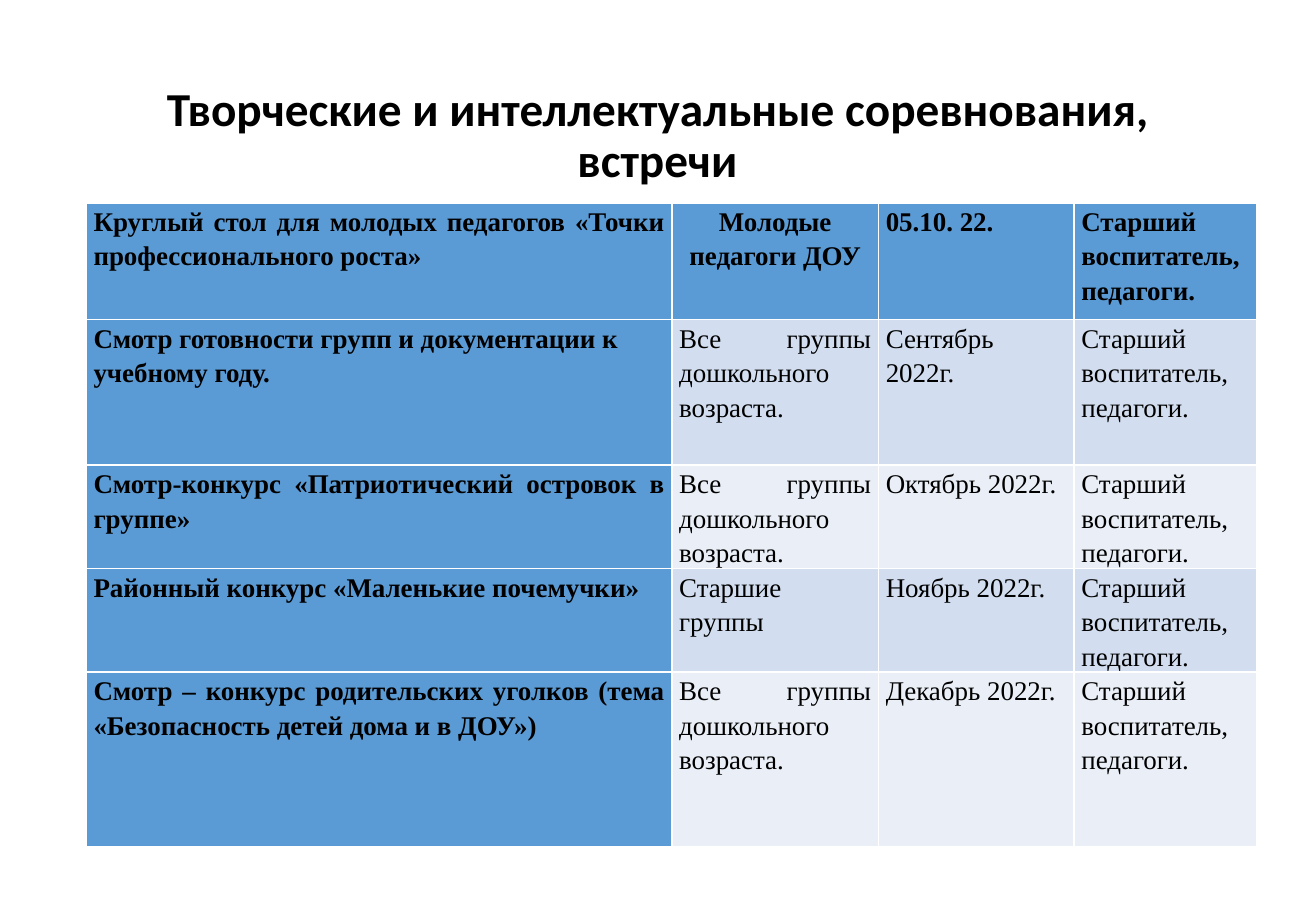
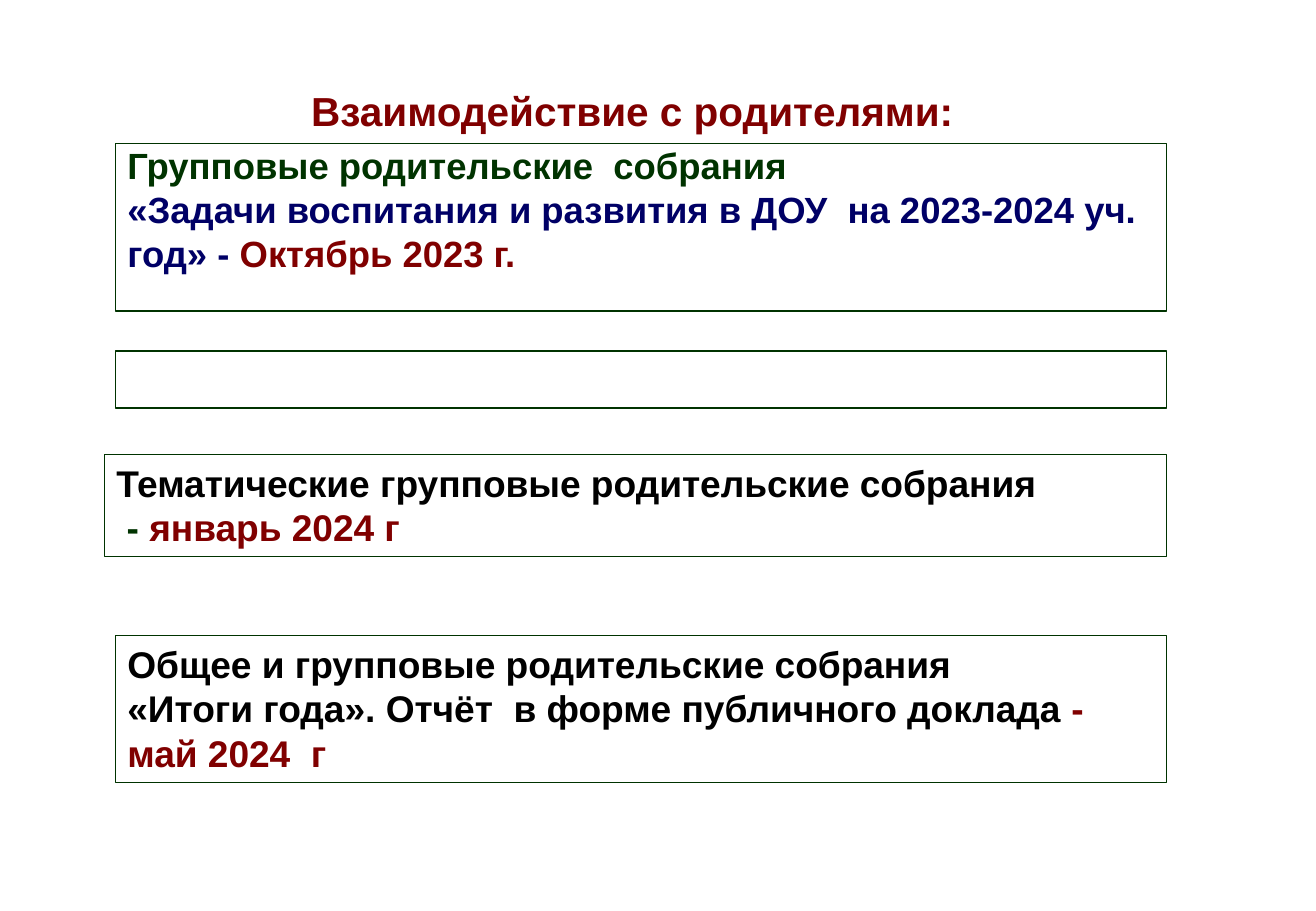
import pptx
import pptx.util
import pptx.dml.color
import pptx.enum.shapes
import pptx.enum.text

Inches = pptx.util.Inches
Pt = pptx.util.Pt
ALIGN = pptx.enum.text.PP_ALIGN
ANCHOR = pptx.enum.text.MSO_ANCHOR

COLORS = {
    "black": "000000", "white": "FFFFFF", "header": "5B9BD5",
    "band_dark": "D2DEEF", "band_light": "EAEFF7",
    "green": "003300", "navy": "000066", "red": "800000",
}

# Slide 1 content
CONTEST_TITLE = "Творческие и интеллектуальные соревнования, встречи"
STAFF = "Старший воспитатель, педагоги."
ALL_GROUPS = "Все группы дошкольного возраста."
CONTESTS = [
    ("Круглый стол для молодых педагогов «Точки профессионального роста»",
     "Молодые педагоги ДОУ", "05.10. 22.", STAFF),
    ("Смотр готовности групп и документации к учебному году.",
     ALL_GROUPS, "Сентябрь 2022г.", STAFF),
    ("Смотр-конкурс «Патриотический островок в группе»",
     ALL_GROUPS, "Октябрь 2022г.", STAFF),
    ("Районный конкурс «Маленькие почемучки»",
     "Старшие группы", "Ноябрь 2022г.", STAFF),
    ("Смотр – конкурс родительских уголков (тема «Безопасность детей дома и в ДОУ»)",
     ALL_GROUPS, "Декабрь 2022г.", STAFF),
]
COLUMN_WIDTHS = [4.82, 1.7, 1.61, 1.5]
ROW_HEIGHTS = [0.96, 1.2, 0.85, 0.85, 1.44]
COLUMN_ALIGN = [ALIGN.JUSTIFY, ALIGN.JUSTIFY, ALIGN.LEFT, ALIGN.LEFT]
CELL_ALIGN = {(0, 1): ALIGN.CENTER, (1, 0): ALIGN.LEFT}

# Slide 2 content: left, top, height, text size, top inset, lines of (text, colour)
PARENTS_TITLE = "Взаимодействие с родителями:"
BOX_RIGHT = 9.6
MEETINGS = [
    (0.95, 1.18, 1.38, 21.6, 0, [
        [("Групповые родительские  собрания", "green")],
        [("«Задачи воспитания и развития в ДОУ  на 2023-2024 уч. год» - ", "navy"),
         ("Октябрь 2023 г.", "red")]]),
    (0.95, 2.89, 0.47, 22, 0.05, []),
    (0.86, 3.74, 0.84, 22, 0.05, [
        [("Тематические групповые родительские собрания", "black")],
        [(" - ", "green"), ("январь 2024 г", "red")]]),
    (0.95, 5.23, 1.21, 22, 0.05, [
        [("Общее и групповые родительские собрания", "black")],
        [("«Итоги года». Отчёт  в форме публичного доклада ", "black"),
         ("- май 2024  г", "red")]]),
]


def rgb(name):
    return pptx.dml.color.RGBColor.from_string(COLORS[name])


def set_font(target, face, size, color=None, bold=True):
    target.font.name = face
    target.font.size = Pt(size)
    target.font.bold = bold
    if color:
        target.font.color.rgb = rgb(color)


def add_page(deck, text, place, face, size, color, align):
    """Add a title-only slide and format its title."""
    page = deck.slides.add_slide(deck.slide_layouts[5])
    title = page.shapes.title
    title.left, title.top, title.width, title.height = map(Inches, place)
    title.text_frame.text = text
    title.text_frame.word_wrap = True
    title.text_frame.vertical_anchor = ANCHOR.MIDDLE
    para = title.text_frame.paragraphs[0]
    para.alignment = align
    para.line_spacing = 0.9
    set_font(para, face, size, color)
    return page


def add_contest_table(page):
    table = page.shapes.add_table(
        len(CONTESTS), len(COLUMN_WIDTHS), Inches(0.71), Inches(1.67),
        Inches(sum(COLUMN_WIDTHS)), Inches(sum(ROW_HEIGHTS))).table
    table.first_col = True
    for column, width in zip(table.columns, COLUMN_WIDTHS):
        column.width = Inches(width)
    for row, height in zip(table.rows, ROW_HEIGHTS):
        row.height = Inches(height)
    for i, texts in enumerate(CONTESTS):
        for j, text in enumerate(texts):
            cell = table.cell(i, j)
            heading = i == 0 or j == 0
            band = "band_dark" if i % 2 else "band_light"
            cell.fill.solid()
            cell.fill.fore_color.rgb = rgb("header" if heading else band)
            cell.margin_left = cell.margin_right = Inches(0.06)
            cell.margin_top = cell.margin_bottom = 0
            cell.text = text
            para = cell.text_frame.paragraphs[0]
            para.alignment = CELL_ALIGN.get((i, j), COLUMN_ALIGN[j])
            para.line_spacing = 1.15
            set_font(para, "Times New Roman", 16, "black", heading)


def add_meeting_box(page, left, top, height, size, inset, lines):
    box = page.shapes.add_shape(
        pptx.enum.shapes.MSO_SHAPE.RECTANGLE, Inches(left), Inches(top),
        Inches(BOX_RIGHT - left), Inches(height))
    box.shadow.inherit = False
    box.fill.background()
    box.line.color.rgb = rgb("green")
    box.line.width = Pt(0.75)
    frame = box.text_frame
    frame.word_wrap = True
    frame.vertical_anchor = ANCHOR.TOP
    frame.margin_top = Inches(inset)
    for i, line in enumerate(lines):
        para = frame.add_paragraph() if i else frame.paragraphs[0]
        para.alignment = ALIGN.LEFT
        set_font(para, "Arial", size)
        for text, color in line:
            span = para.add_run()
            span.text = text
            span.font.color.rgb = rgb(color)


def main():
    deck = pptx.Presentation()
    deck.slide_width, deck.slide_height = Inches(10.83), Inches(7.5)

    # Contests
    page = add_page(deck, CONTEST_TITLE, (0.74, 0.4, 9.34, 1.45),
                    "Calibri", 28, "black", ALIGN.CENTER)
    add_contest_table(page)

    # Meetings with parents
    page = add_page(deck, PARENTS_TITLE, (2.46, 0.68, 5.62, 0.5),
                    "Arial", 24, "red", ALIGN.LEFT)
    for meeting in MEETINGS:
        add_meeting_box(page, *meeting)

    deck.save("out.pptx")


if __name__ == "__main__":
    main()
